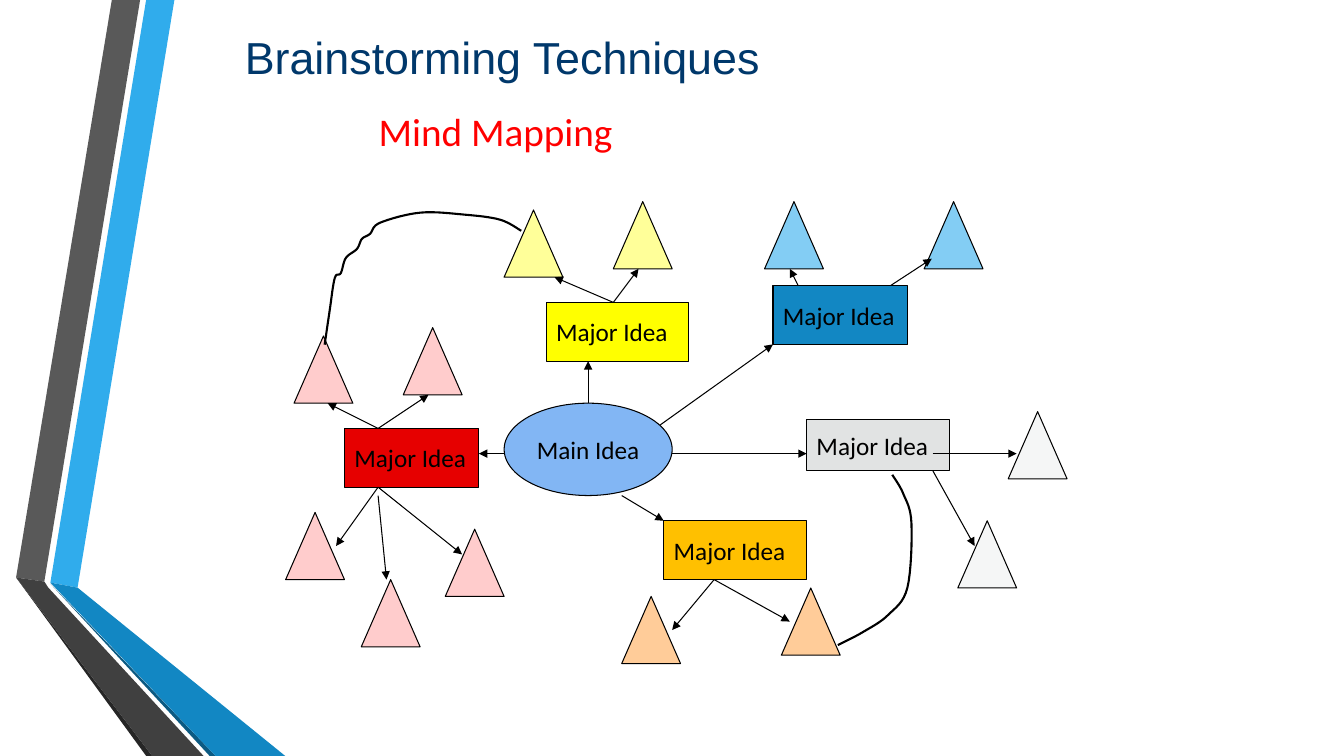
"""Build a mind map slide: one main idea, five major ideas and their branches."""
from pptx import Presentation
from pptx.util import Inches, Pt
from pptx.dml.color import RGBColor
from pptx.enum.shapes import MSO_SHAPE as Kind, MSO_CONNECTOR as Link
from pptx.enum.text import PP_ALIGN as Align, MSO_ANCHOR as Anchor
from pptx.oxml.ns import qn
from lxml.etree import SubElement

hue = RGBColor.from_string
black = "000000"
cells = 12
leaf_size = (7, 8)
steps = 8


def on_grid(*counts):
    return [Inches(count / cells) for count in counts]


def paint(shape, fill, line=black, width=0.75):
    shape.shadow.inherit = False
    if fill:
        shape.fill.solid()
        shape.fill.fore_color.rgb = hue(fill)
    else:
        shape.fill.background()
    if line:
        shape.line.color.rgb = hue(line)
        shape.line.width = Pt(width)
    else:
        shape.line.fill.background()


deck = Presentation()
deck.slide_width, deck.slide_height = Inches(13.33), Inches(7.5)
shapes = deck.slides.add_slide(deck.slide_layouts[6]).shapes

bands = {
    "30ACEC": [(0.5, 5.78), (0.77, 5.83), (1.73, 0), (1.45, 0)],
    "595959": [(1.39, 0), (1.11, 0), (0.16, 5.73), (0.44, 5.77)],
    "262626": [(0.16, 5.73), (1.45, 7.5), (1.51, 7.5)],
    "0C5A82": [(0.5, 5.79), (2.08, 7.5), (2.14, 7.5)],
    "1287C3": [(0.5, 5.78), (2.14, 7.5), (2.83, 7.5), (0.77, 5.83)],
    "404040": [(2.02, 7.5), (0.48, 5.83), (0.44, 5.77), (0.16, 5.73), (1.51, 7.5)],
}
for fill, corners in bands.items():
    spots = [(Inches(x), Inches(y)) for x, y in corners]
    pen = shapes.build_freeform(*spots[0])
    pen.add_line_segments(spots[1:], close=True)
    paint(pen.convert_to_shape(), fill, None)

labels = []
titles = [
    ("Mind Mapping", (2.5, 0.92, 4.83, 0.75), 28, "FF0000", "Calibri", Align.CENTER),
    ("Brainstorming Techniques", (2.33, 0.17, 9, 0.78), 32, "00386B", "Arial", Align.LEFT),
]
for text, place, size, color, font, align in titles:
    title = shapes.add_textbox(*map(Inches, place))
    labels.append((title, text, size, color, font, align, True))

# fields = None
ideas = [
    dict(fill="1287C3", box=(92, 34, 16, 7), spoke=((78, 51), (92, 41)),
         tint="83CDF4", leaves=[(91, 24), (110, 24)],
         twigs={(106, 34): [(110.9, 30.8)], (95, 34): [(94, 32)]}),
    dict(fill="E1E3E3", box=(96, 50, 17, 6), spoke=((80, 54), (96, 54)),
         tint="F5F6F6", leaves=[(114, 62), (120, 49)],
         twigs={(111, 54): [(121, 54)], (111, 56): [(116, 65)]}),
    dict(fill="FFFF00", box=(65, 36, 17, 7), spoke=((70, 48), (70, 43)),
         tint="FFFF99", leaves=[(73, 24), (60, 25)],
         twigs={(73, 36): [(76, 32), (66, 33)]}),
    dict(fill="E60000", box=(41, 51, 16, 7), spoke=((60, 54), (57, 54)),
         tint="FFCCCC", leaves=[(53, 63), (43, 69), (48, 39), (35, 40), (34, 61)],
         twigs={(45, 51): [(39, 48), (51, 47)], (45, 58): [(40, 65), (55, 66)],
                (45, 59): [(46, 69)]}),
    dict(fill="FFC000", box=(79, 62, 17, 7), spoke=((74, 59), (79, 62)),
         tint="FFCC99", leaves=[(74, 71), (93, 70)],
         twigs={(85, 69): [(80, 75), (94, 74)]}),
]
for idea in ideas:
    box = shapes.add_shape(Kind.RECTANGLE, *on_grid(*idea["box"]))
    paint(box, idea["fill"])
    labels.append((box, "Major Idea", 18, black, "Calibri", Align.LEFT, False))
    for corner in idea["leaves"]:
        leaf = shapes.add_shape(Kind.ISOSCELES_TRIANGLE, *on_grid(*corner, *leaf_size))
        paint(leaf, idea["tint"])
    twigs = [(root, tip) for root, tips in idea["twigs"].items() for tip in tips]
    for start, end in [idea["spoke"]] + twigs:
        arrow = shapes.add_connector(Link.STRAIGHT, *on_grid(*start, *end))
        arrow.line.color.rgb = hue(black)
        arrow.line.width = Pt(0.75)
        frame = arrow._element.spPr
        SubElement(frame.find(qn("a:ln")), qn("a:tailEnd"), type="triangle")
        SubElement(frame, qn("a:effectLst"))

main = shapes.add_shape(Kind.OVAL, *on_grid(60, 48, 20, 11))
paint(main, "82B6F4")
labels.append((main, "Main Idea", 18, black, "Calibri", Align.CENTER, False))

for shape, text, size, color, font, align, wrap in labels:
    frame = shape.text_frame
    frame.text = text
    frame.word_wrap = wrap
    frame.vertical_anchor = Anchor.MIDDLE
    para = frame.paragraphs[0]
    para.alignment = align
    face = para.runs[0].font
    face.size, face.name = Pt(size), font
    face.color.rgb = hue(color)

grey_to_orange = [(8.85, 4.71), (8.96, 4.9), (9.04, 5.19), (9, 5.83),
                  (8.81, 6.1), (8.56, 6.27), (8.31, 6.4)]
red_to_yellow = [(3.22, 3.42), (3.27, 3.08), (3.32, 2.76), (3.38, 2.71), (3.43, 2.56),
                 (3.54, 2.47), (3.59, 2.37), (3.67, 2.32), (3.77, 2.21), (4.17, 2.11),
                 (4.61, 2.13), (4.96, 2.18), (5.17, 2.29)]
for knots in (grey_to_orange, red_to_yellow):
    chain = [knots[0]] + knots + [knots[-1]]
    spots = []
    for before, start, end, after in zip(chain, chain[1:], chain[2:], chain[3:]):
        for step in range(1, steps + 1):
            t = step / steps
            spots.append([
                Inches(b + t * (c - a) / 2
                       + t ** 2 * (2 * a - 5 * b + 4 * c - d) / 2
                       + t ** 3 * (3 * b - a - 3 * c + d) / 2)
                for a, b, c, d in zip(before, start, end, after)])
    pen = shapes.build_freeform(*map(Inches, knots[0]))
    pen.add_line_segments(spots, close=False)
    paint(pen.convert_to_shape(), None, width=1.5)

deck.save("out.pptx")
